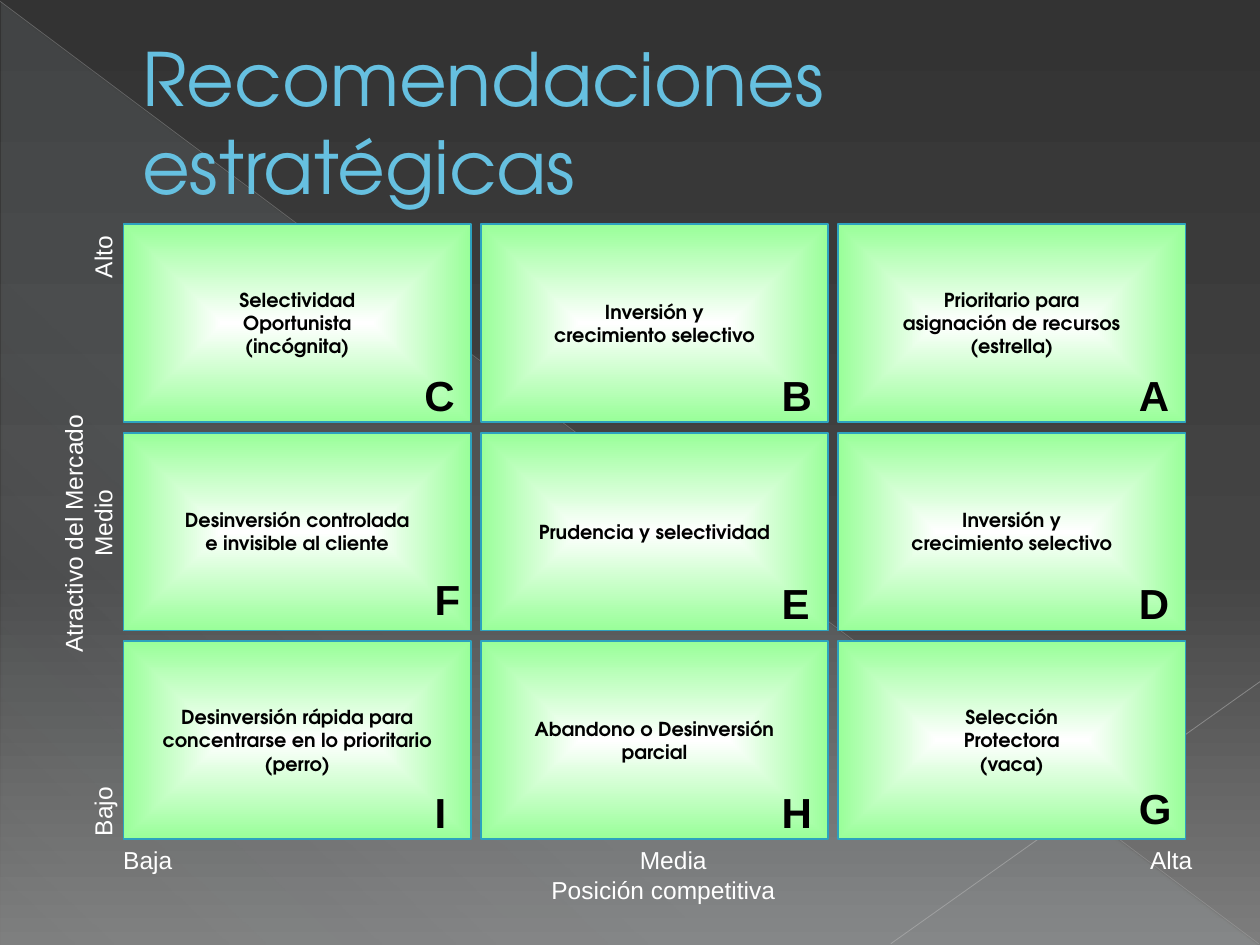
from lxml.etree import SubElement
from pptx import Presentation
from pptx.dml.color import RGBColor
from pptx.enum.shapes import MSO_CONNECTOR as Connector, MSO_SHAPE as Shape
from pptx.enum.text import MSO_ANCHOR as Anchor, PP_ALIGN as Align
from pptx.oxml.ns import qn
from pptx.util import Inches, Pt

# Content
TITLE = "Recomendaciones estratégicas"
HEADING_FONT, LABEL_FONT = "TeX Gyre Adventor", "Arial"

# Rows from high to low appeal: (letter, lines, letter nudge right and down)
MATRIX = [
    [("C", ["Selectividad", "Oportunista", "(incógnita)"], (0, 0)),
     ("B", ["Inversión y", "crecimiento selectivo"], (0, 0)),
     ("A", ["Prioritario para", "asignación de recursos", "(estrella)"], (0, 0))],
    [("F", ["Desinversión controlada", "e invisible al cliente"], (0.08, -0.03)),
     ("E", ["Prudencia y selectividad"], (0, 0)),
     ("D", ["Inversión y", "crecimiento selectivo"], (0, 0))],
    [("I", ["Desinversión rápida para", "concentrarse en lo prioritario", "(perro)"], (0.08, 0)),
     ("H", ["Abandono o Desinversión", "parcial"], (0, 0)),
     ("G", ["Selección", "Protectora", "(vaca)"], (0, -0.03))],
]

# Each axis: box, rotation, (text, alignment) per line, tab stops
AXES = [
    ((0.88, 6.66, 8.77, 0.57), 0,
     [("Baja\tMedia\tAlta", Align.LEFT), ("Posición competitiva", Align.CENTER)],
     (4.1, 8.15)),
    ((-1.8, 3.95, 5, 0.57), 270,
     [("Atractivo del Mercado", Align.CENTER), ("Bajo\tMedio\tAlto", Align.LEFT)],
     (2.22, 4.43)),
]

# Stops: position %, colour, opacity %
BACKGROUND = [(0, "333333", 100), (60, "444444", 100), (100, "7D7D7D", 100)]
TRIANGLE = [(0, "DEF5FA", 10), (70, "DEF5FA", 8), (100, "DEF5FA", 1)]
CELL = [(0, "FFFFFF", 100), (100, "99FF99", 100)]

# Thin diagonals: ends, colour, width, opacity %
DIAGONALS = [
    ((0, 0.01, 9.99, 7.49), "B9B9B9", 0.39, 35),
    ((10, 5.41, 7.07, 7.49), "C1C1C1", 0.47, 45),
]

# Grid
GRID_LEFT, GRID_TOP = 0.98, 1.78
CELL_WIDTH, CELL_HEIGHT = 2.76, 1.57
COLUMN_STEP, ROW_STEP = 2.835, 1.655
LETTER_RIGHT, LETTER_DOWN = 2.29, 1.1


def color(value):
    return RGBColor.from_string(value)


def box(values):
    return [Inches(value) for value in values]


def add_alpha(color_element, percent):
    SubElement(color_element, qn("a:alpha"), val=str(percent * 1000))


def set_gradient(fill, parent, stops, angle=None):
    """Linear at the given angle, or from the centre when there is none."""
    fill.solid()
    solid = parent.find(qn("a:solidFill"))
    gradient = parent.makeelement(qn("a:gradFill"), {"rotWithShape": "1"})
    parent.replace(solid, gradient)
    stop_list = SubElement(gradient, qn("a:gsLst"))
    for position, value, opacity in stops:
        stop = SubElement(stop_list, qn("a:gs"), pos=str(position * 1000))
        stop_color = SubElement(stop, qn("a:srgbClr"), val=value)
        if opacity < 100:
            add_alpha(stop_color, opacity)
    if angle is None:
        center = SubElement(gradient, qn("a:path"), {"path": "shape"})
        SubElement(center, qn("a:fillToRect"), l="50000", t="50000", r="50000", b="50000")
    else:
        SubElement(gradient, qn("a:lin"), ang=str(angle * 60000), scaled="0")


def write(shape, lines, size, font=LABEL_FONT, fill="FFFFFF", bold=False,
          anchor=Anchor.TOP, wrap=True, indent=0, tabs=()):
    """Write (text, alignment) pairs, one paragraph each."""
    frame = shape.text_frame
    frame.word_wrap = wrap
    frame.vertical_anchor = anchor
    for index, (text, alignment) in enumerate(lines):
        paragraph = frame.paragraphs[0] if index == 0 else frame.add_paragraph()
        paragraph.alignment = alignment
        run = paragraph.add_run()
        run.text = text
        run.font.size, run.font.name, run.font.bold = Pt(size), font, bold
        run.font.color.rgb = color(fill)
        properties = paragraph._p.get_or_add_pPr()
        if indent:
            properties.set("marL", str(Inches(indent)))
            properties.set("indent", "0")
        if tabs and "\t" in text:
            tab_list = SubElement(properties, qn("a:tabLst"))
            for position in tabs:
                SubElement(tab_list, qn("a:tab"), pos=str(Inches(position)), algn="l")


def add_text(slide, place, lines, size, rotation=0, **style):
    shape = slide.shapes.add_textbox(*box(place))
    shape.rotation = rotation
    write(shape, lines, size, **style)


def add_panel(slide, kind, place, stops, angle=None):
    shape = slide.shapes.add_shape(kind, *box(place))
    shape.shadow.inherit = False
    set_gradient(shape.fill, shape._element.spPr, stops, angle)
    return shape


def add_diagonal(slide, ends, value, width, opacity):
    line = slide.shapes.add_connector(Connector.STRAIGHT, *box(ends))
    line.line.color.rgb = color(value)
    line.line.width = Pt(width)
    properties = line._element.spPr
    add_alpha(properties.find(".//" + qn("a:srgbClr")), opacity)
    SubElement(properties, qn("a:effectLst"))


def main():
    presentation = Presentation()
    presentation.slide_width, presentation.slide_height = Inches(10), Inches(7.5)
    slide = presentation.slides.add_slide(presentation.slide_layouts[6])

    # Backdrop
    background = slide.background.fill
    background.solid()
    set_gradient(background, slide._element.find(".//" + qn("p:bgPr")), BACKGROUND, 90)
    triangle = add_panel(slide, Shape.RIGHT_TRIANGLE, (0.01, 0.02, 9.98, 7.48), TRIANGLE, 133)
    triangle.line.fill.background()
    for diagonal in DIAGONALS:
        add_diagonal(slide, *diagonal)

    # Title and axes
    add_text(slide, (0.5, 0.21, 9, 1.53), [(TITLE, Align.LEFT)], 42,
             font=HEADING_FONT, fill="66C0E0", indent=0.53)
    for place, rotation, lines, tabs in AXES:
        add_text(slide, place, lines, 14, rotation, tabs=tabs)

    # Matrix cells with their letters
    for row, cells in enumerate(MATRIX):
        for column, (letter, lines, (right, down)) in enumerate(cells):
            left = GRID_LEFT + column * COLUMN_STEP
            top = GRID_TOP + row * ROW_STEP
            cell = add_panel(slide, Shape.RECTANGLE, (left, top, CELL_WIDTH, CELL_HEIGHT), CELL)
            cell.line.color.rgb = color("2DA2BF")
            cell.line.width = Pt(1)
            write(cell, [(line, Align.CENTER) for line in lines], 11, font=HEADING_FONT,
                  fill="000000", bold=True, anchor=Anchor.MIDDLE, wrap=False)
            add_text(slide, (left + LETTER_RIGHT + right, top + LETTER_DOWN + down, 0.55, 0.5),
                     [(letter, Align.LEFT)], 24, fill="000000", bold=True)

    presentation.save("out.pptx")


if __name__ == "__main__":
    main()
